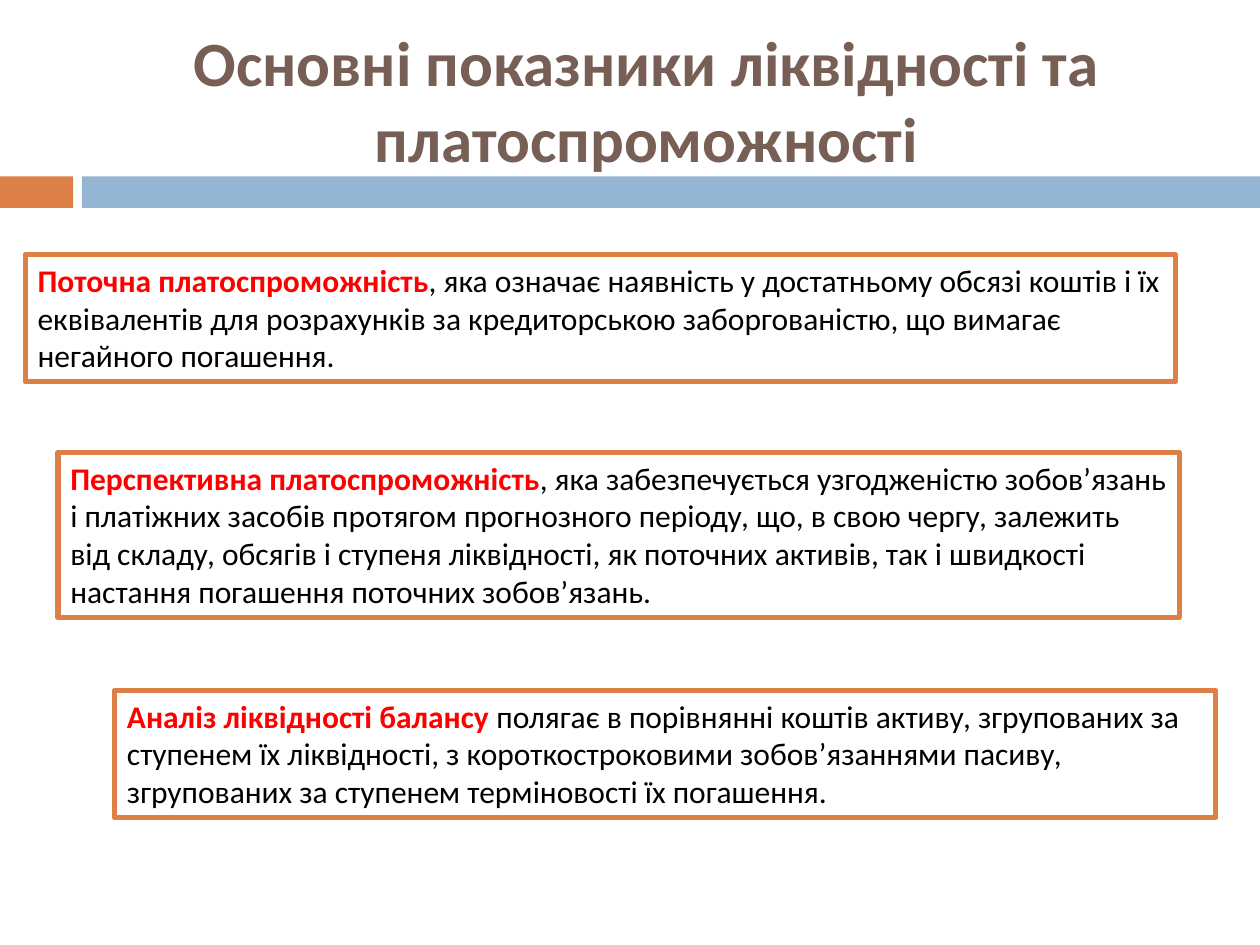
import pptx
import pptx.dml.color
import pptx.enum.shapes
import pptx.enum.text
import pptx.util

COLORS = {
    "title": "775F55",
    "orange": "DD8047",
    "blue": "94B6D2",
    "term": "FF0000",
    "text": "000000",
    "white": "FFFFFF",
}
FONT = "Calibri"

presentation = pptx.Presentation()
presentation.slide_width = pptx.util.Inches(10)
presentation.slide_height = pptx.util.Inches(7.5)
column = presentation.slide_width / 100
row = presentation.slide_height / 75
slide = presentation.slides.add_slide(presentation.slide_layouts[5])


def add_text(paragraph, text, *, size, color, bold=False):
    run = paragraph.add_run()
    run.text = text
    run.font.name = FONT
    run.font.size = pptx.util.Pt(size)
    run.font.bold = bold
    run.font.color.rgb = pptx.dml.color.RGBColor.from_string(COLORS[color])


def add_rectangle(left, top, width, height, fill, line=None):
    """Place a rectangle given in grid columns and rows."""
    shape = slide.shapes.add_shape(
        pptx.enum.shapes.MSO_SHAPE.RECTANGLE,
        round(left * column), round(top * row),
        round(width * column), round(height * row))
    shape.shadow.inherit = False
    shape.fill.solid()
    shape.fill.fore_color.rgb = pptx.dml.color.RGBColor.from_string(COLORS[fill])
    if line:
        shape.line.color.rgb = pptx.dml.color.RGBColor.from_string(COLORS[line])
        shape.line.width = pptx.util.Pt(3)
    else:
        shape.line.fill.background()
    return shape


# Divider band under the title
add_rectangle(0, 14, 5.8, 2.5, "orange")
add_rectangle(6.5, 14, 93.5, 2.5, "blue")

title = slide.shapes.title
title.left, title.top = round(6.7 * column), round(2.5 * row)
title.width, title.height = round(89.2 * column), round(10.8 * row)
title.text_frame.word_wrap = True
title.text_frame.auto_size = pptx.enum.text.MSO_AUTO_SIZE.NONE
title.text_frame.vertical_anchor = pptx.enum.text.MSO_ANCHOR.MIDDLE
title_paragraph = title.text_frame.paragraphs[0]
title_paragraph.alignment = pptx.enum.text.PP_ALIGN.CENTER
add_text(title_paragraph, "Основні показники ліквідності та платоспроможності",
         size=36, color="title", bold=True)

# Left, top, width and height in the grid, then the term and its definition
definitions = [
    (2, 20.2, 91.3, 10.1, "Поточна платоспроможність",
     ", яка означає наявність у достатньому обсязі коштів і їх еквівалентів "
     "для розрахунків за кредиторською заборгованістю, що вимагає негайного "
     "погашення."),
    (4.6, 35.9, 89, 13.1, "Перспективна платоспроможність",
     ", яка забезпечується узгодженістю зобов’язань і платіжних засобів "
     "протягом прогнозного періоду, що, в свою чергу, залежить від складу, "
     "обсягів і ступеня ліквідності, як поточних активів, так і швидкості "
     "настання погашення поточних зобов’язань."),
    (9.1, 54.8, 87.4, 10.1, "Аналіз ліквідності балансу ",
     "полягає в порівнянні коштів активу, згрупованих за ступенем їх "
     "ліквідності, з короткостроковими зобов’язаннями пасиву, згрупованих "
     "за ступенем терміновості їх погашення."),
]
for left, top, width, height, term, definition in definitions:
    box = add_rectangle(left, top, width, height, "white", line="orange")
    box.text_frame.word_wrap = True
    box.text_frame.auto_size = pptx.enum.text.MSO_AUTO_SIZE.SHAPE_TO_FIT_TEXT
    box.text_frame.vertical_anchor = pptx.enum.text.MSO_ANCHOR.TOP
    paragraph = box.text_frame.paragraphs[0]
    paragraph.alignment = pptx.enum.text.PP_ALIGN.LEFT
    add_text(paragraph, term, size=18, color="term", bold=True)
    add_text(paragraph, definition, size=18, color="text")

presentation.save("out.pptx")
